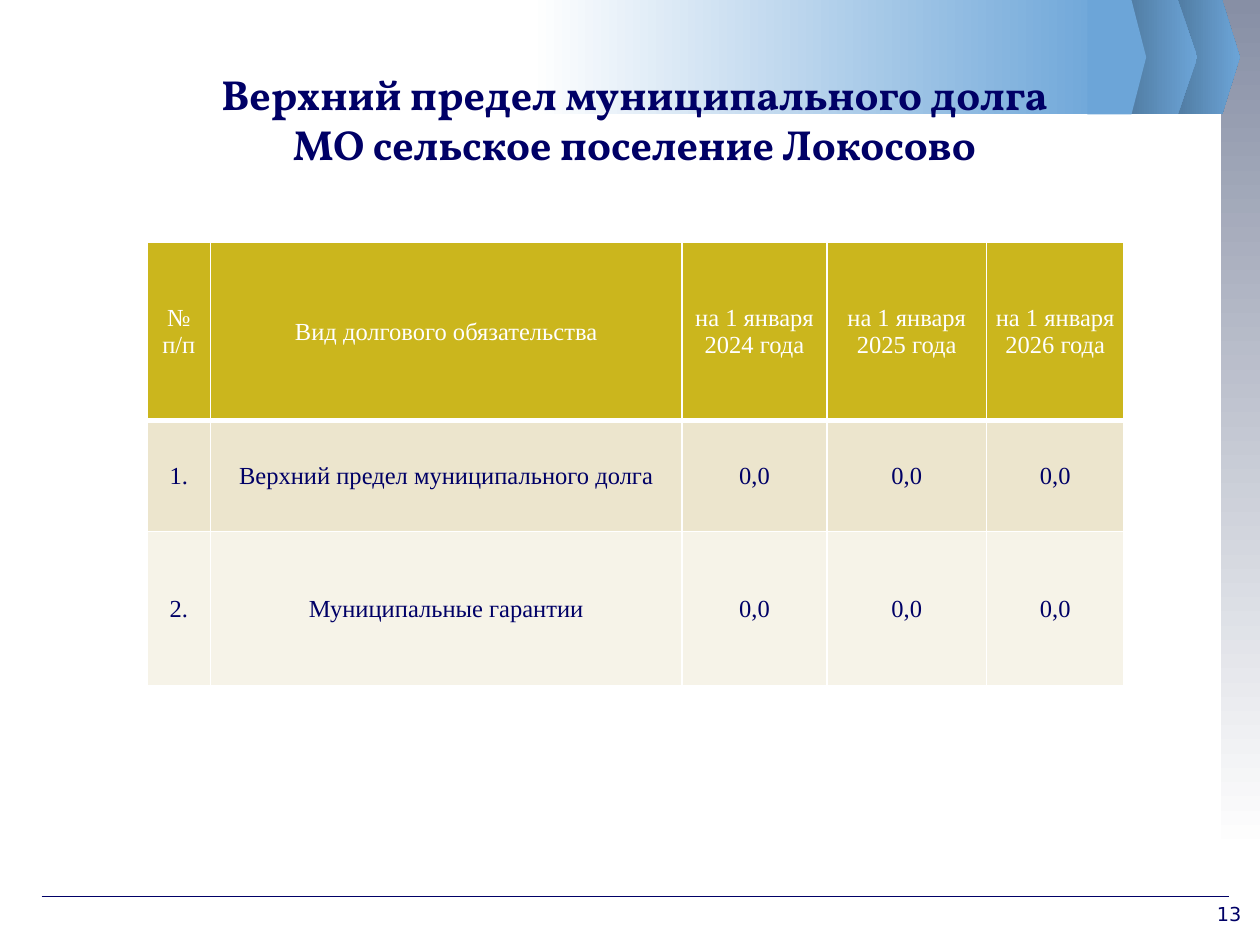
from collections import namedtuple
from dataclasses import dataclass

from lxml import etree
from pptx import Presentation
from pptx.dml.color import RGBColor
from pptx.enum.shapes import MSO_CONNECTOR, MSO_SHAPE
from pptx.enum.text import MSO_ANCHOR, MSO_AUTO_SIZE, PP_ALIGN
from pptx.oxml.ns import qn
from pptx.util import Inches, Pt

RECTANGLE, PENTAGON = MSO_SHAPE.RECTANGLE, MSO_SHAPE.PENTAGON
STRAIGHT = MSO_CONNECTOR.STRAIGHT
MIDDLE, CENTER, LEFT = MSO_ANCHOR.MIDDLE, PP_ALIGN.CENTER, PP_ALIGN.LEFT
NO_AUTOFIT = MSO_AUTO_SIZE.NONE
RIGHTWARD, DOWNWARD = 0, 270

WIDTH, HEIGHT = Inches(10), Inches(7.5)
Box = namedtuple("Box", "left top width height")


@dataclass(frozen=True)
class Theme:
    navy: str = "000066"
    white: str = "FFFFFF"
    sky: str = "6CA5D8"
    steel: str = "4D769B"
    slate: str = "878FA5"
    gold: str = "CBB61D"
    bands: tuple = ("ECE5CD", "F6F3E8")
    title_font: str = "Vollkorn"
    table_font: str = "Times New Roman"
    number_font: str = "DejaVu Sans"
    title_size: int = 24
    table_size: int = 14
    number_size: int = 11
    rule_width: float = 0.75


THEME = Theme()

HEADINGS = ["№ п/п", "Вид долгового обязательства"] + [
    f"на 1 января {year} года" for year in (2024, 2025, 2026)]
OBLIGATIONS = ["Верхний предел муниципального долга", "Муниципальные гарантии"]
COLUMN_SHARES = (0.5, 3.75, 1.15, 1.27, 1.09)
ROW_SHARES = (1.42, 0.88, 1.23)


def share(left, top, width, height):
    """Box from shares of the slide's size."""
    return Box(int(left * WIDTH), int(top * HEIGHT),
               int(width * WIDTH), int(height * HEIGHT))


def rgb(color):
    return RGBColor.from_string(color)


def format_text(para, font, size, color, align=CENTER, bold=False):
    para.alignment = align
    para.font.name, para.font.size, para.font.bold = font, Pt(size), bold
    para.font.color.rgb = rgb(color)


def add_panel(page, box, kind, colors, angle=RIGHTWARD):
    """Unlined shape with a plain fill or a two-colour gradient."""
    panel = page.shapes.add_shape(kind, *box)
    panel.shadow.inherit = False
    panel.line.fill.background()
    if kind == PENTAGON:
        panel.adjustments[0] = 0.25
    if len(colors) == 1:
        panel.fill.solid()
        panel.fill.fore_color.rgb = rgb(colors[0])
        return
    panel.fill.gradient()
    panel.fill.gradient_angle = angle
    for stop, color in zip(panel.fill.gradient_stops, colors):
        stop.color.rgb = rgb(color)


def add_side_strip(page, box):
    add_panel(page, box, RECTANGLE, (THEME.slate, THEME.white), DOWNWARD)


def add_banner(page, box):
    """Fading band that ends in three overlapping arrows."""
    parts = (  # left and width as shares of the banner, back to front
        (0.9, 0.1, PENTAGON, (THEME.steel, THEME.sky)),
        (0.83, 0.11, PENTAGON, (THEME.steel, THEME.sky)),
        (0, 0.82, RECTANGLE, (THEME.white, THEME.sky)),
        (0.785, 0.083, PENTAGON, (THEME.sky,)),
    )
    for left, width, kind, colors in parts:
        part = Box(int(box.left + left * box.width), box.top,
                   int(width * box.width), box.height)
        add_panel(page, part, kind, colors)


def add_footer_rule(page, box):
    rule = page.shapes.add_connector(
        STRAIGHT, box.left, box.top, box.left + box.width, box.top)
    rule.line.color.rgb = rgb(THEME.navy)
    rule.line.width = Pt(THEME.rule_width)
    etree.SubElement(rule.element.spPr, qn("a:effectLst"))


def place_title(page, box, text):
    title = page.shapes.title
    title.left, title.top, title.width, title.height = box
    frame = title.text_frame
    frame.text = text
    frame.auto_size, frame.vertical_anchor = NO_AUTOFIT, MIDDLE
    format_text(frame.paragraphs[0], THEME.title_font, THEME.title_size,
                THEME.navy, bold=True)
    # Bring the title in front of the banner
    title.element.getparent().append(title.element)


def set_borders(cell, bottom_width):
    properties = cell._tc.get_or_add_tcPr()
    for side, width in (("L", 1), ("R", 1), ("T", 1), ("B", bottom_width)):
        line = etree.SubElement(properties, qn(f"a:ln{side}"), w=str(Pt(width)))
        fill = etree.SubElement(line, qn("a:solidFill"))
        etree.SubElement(fill, qn("a:srgbClr"), val=THEME.white)


def add_debt_table(page, box):
    records = [HEADINGS] + [[f"{number}.", name] + ["0,0"] * 3
                            for number, name in enumerate(OBLIGATIONS, 1)]
    table = page.shapes.add_table(len(records), len(HEADINGS), *box).table
    for column, part in zip(table.columns, COLUMN_SHARES):
        column.width = int(box.width * part / sum(COLUMN_SHARES))
    for row, part in zip(table.rows, ROW_SHARES):
        row.height = int(box.height * part / sum(ROW_SHARES))

    fills = (THEME.gold, *THEME.bands)
    for index, (row, record, fill) in enumerate(zip(table.rows, records, fills)):
        heading = index == 0
        for cell, text in zip(row.cells, record):
            cell.text = text
            cell.vertical_anchor = MIDDLE
            cell.margin_left = cell.margin_right = cell.margin_top = Inches(0.01)
            cell.margin_bottom = 0
            set_borders(cell, 3 if heading else 1)
            cell.fill.solid()
            cell.fill.fore_color.rgb = rgb(fill)
            format_text(cell.text_frame.paragraphs[0], THEME.table_font,
                        THEME.table_size, THEME.white if heading else THEME.navy)


def add_page_number(page, box, number):
    frame = page.shapes.add_textbox(*box).text_frame
    frame.word_wrap = True
    frame.text = str(number)
    format_text(frame.paragraphs[0], THEME.number_font, THEME.number_size,
                THEME.navy, LEFT)


def main():
    deck = Presentation()
    deck.slide_width, deck.slide_height = WIDTH, HEIGHT
    page = deck.slides.add_slide(deck.slide_layouts[5])

    # Background decoration
    add_side_strip(page, share(0.969, 0, 0.031, 0.903))
    add_footer_rule(page, share(0.033, 0.949, 0.942, 0))
    add_banner(page, share(0.421, 0, 0.563, 0.121))

    # Content
    place_title(page, share(0.117, 0.063, 0.773, 0.125),
                "Верхний предел муниципального долга\v"
                "МО сельское поселение Локосово")
    add_debt_table(page, share(0.117, 0.256, 0.775, 0.47))
    add_page_number(page, share(0.956, 0.948, 0.044, 0.052), 13)

    deck.save("out.pptx")


if __name__ == "__main__":
    main()
